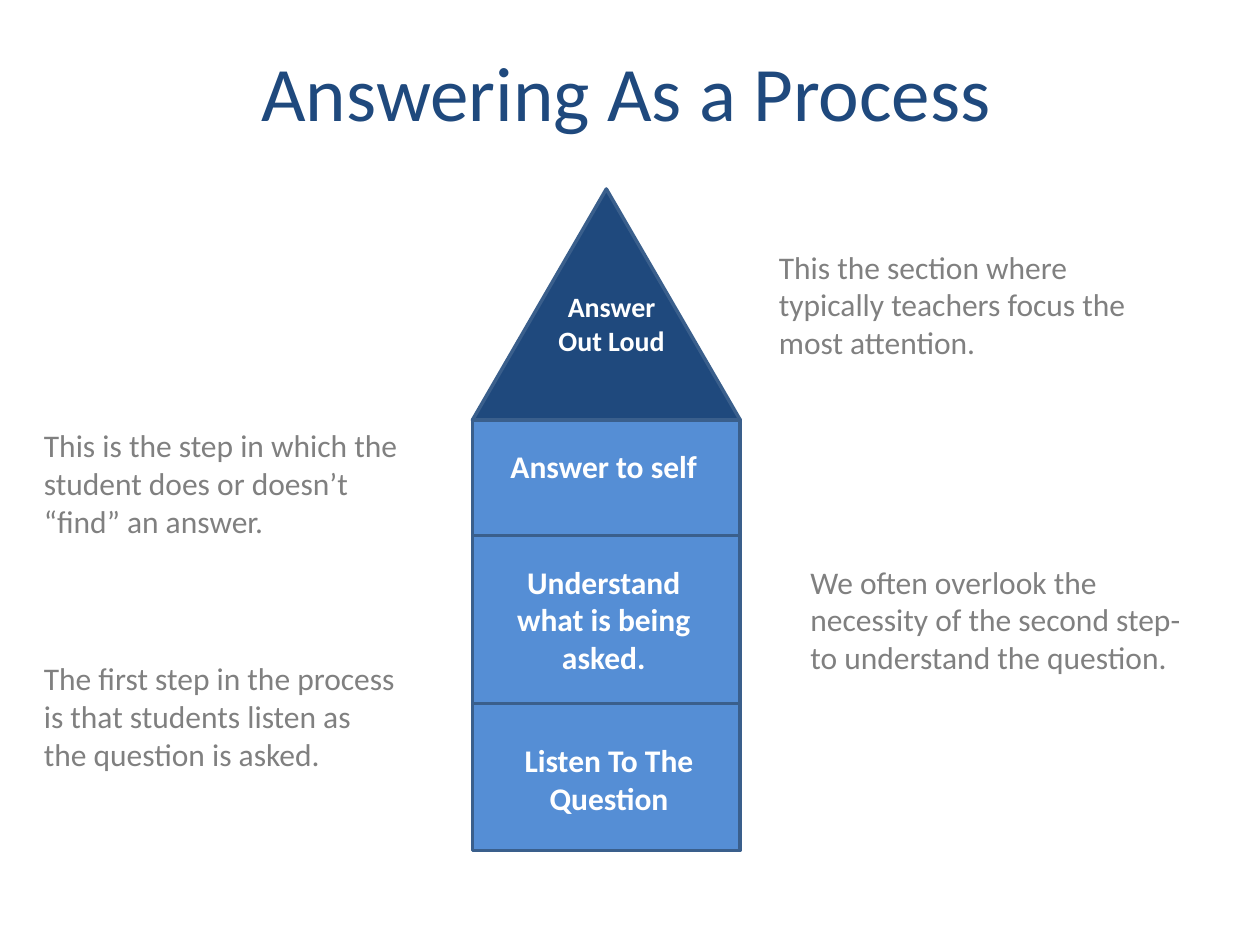
from pptx import Presentation
from pptx.dml.color import RGBColor
from pptx.enum.shapes import MSO_SHAPE as Preset
from pptx.enum.text import MSO_ANCHOR as Anchor, PP_ALIGN as Align
from pptx.util import Pt

COLORS = {
    "navy": "1F497D",
    "blue": "558ED5",
    "outline": "3A5F8C",
    "white": "FFFFFF",
    "gray": "808080",
}
TOWER_LEFT, TOWER_TOP, TOWER_WIDTH, ROOF_HEIGHT = 270, 108, 153, 132
ROOF_LABEL = ("Answer\nOut Loud", (312, 162, 75, 66))
STEPS = [
    (66, "Answer to self", (282, 252, 126, 29)),
    (96, "Understand what is being asked.", (282, 318, 126, 73)),
    (84, "Listen To The Question", (282, 420, 132, 51)),
]
NOTES = [
    ("The first step in the process is that students listen as the question is asked.",
     (18, 373, 216, 94)),
    ("We often overlook the necessity of the second step- to understand the question.",
     (456, 318, 228, 94)),
    ("This is the step in which the student does or doesn’t “find” an answer.",
     (18, 240, 228, 94)),
    ("This the section where typically teachers focus the most attention.",
     (438, 138, 222, 73)),
]


def color(name):
    """Return the named colour."""
    return RGBColor.from_string(COLORS[name])


def add_text(slide, text, box, size, color_name, align=Align.LEFT, bold=False, anchor=Anchor.TOP):
    """Add a wrapping text box with one uniform text style."""
    text_frame = slide.shapes.add_textbox(*map(Pt, box)).text_frame
    text_frame.word_wrap = True
    text_frame.vertical_anchor = anchor
    text_frame.text = text
    for paragraph in text_frame.paragraphs:
        paragraph.alignment = align
        for run in paragraph.runs:
            run.font.name = "Calibri"
            run.font.size = Pt(size)
            run.font.bold = bold
            run.font.color.rgb = color(color_name)


def add_block(slide, preset, top, height, fill):
    """Add one outlined block of the tower."""
    shape = slide.shapes.add_shape(
        preset, Pt(TOWER_LEFT), Pt(top), Pt(TOWER_WIDTH), Pt(height))
    shape.shadow.inherit = False
    shape.fill.solid()
    shape.fill.fore_color.rgb = color(fill)
    shape.line.color.rgb = color("outline")
    shape.line.width = Pt(2)


def add_label(slide, text, box, size):
    """Add a bold white label on a block."""
    add_text(slide, text, box, size, "white", Align.CENTER, bold=True)


def add_tower(slide):
    """Stack the roof and the steps from top to bottom."""
    add_block(slide, Preset.ISOSCELES_TRIANGLE, TOWER_TOP, ROOF_HEIGHT, "navy")
    add_label(slide, *ROOF_LABEL, 16)
    top = TOWER_TOP + ROOF_HEIGHT
    for height, text, box in STEPS:
        add_block(slide, Preset.RECTANGLE, top, height, "blue")
        add_label(slide, text, box, 18)
        top += height


def main():
    """Build and save the slide."""
    presentation = Presentation()
    presentation.slide_width, presentation.slide_height = Pt(720), Pt(540)
    slide = presentation.slides.add_slide(presentation.slide_layouts[6])
    add_text(slide, "Answering As a Process", (-2, -4, 720, 112), 44, "navy",
             Align.CENTER, anchor=Anchor.MIDDLE)
    add_tower(slide)
    for text, box in NOTES:
        add_text(slide, text, box, 18, "gray")
    presentation.save("out.pptx")


if __name__ == "__main__":
    main()
